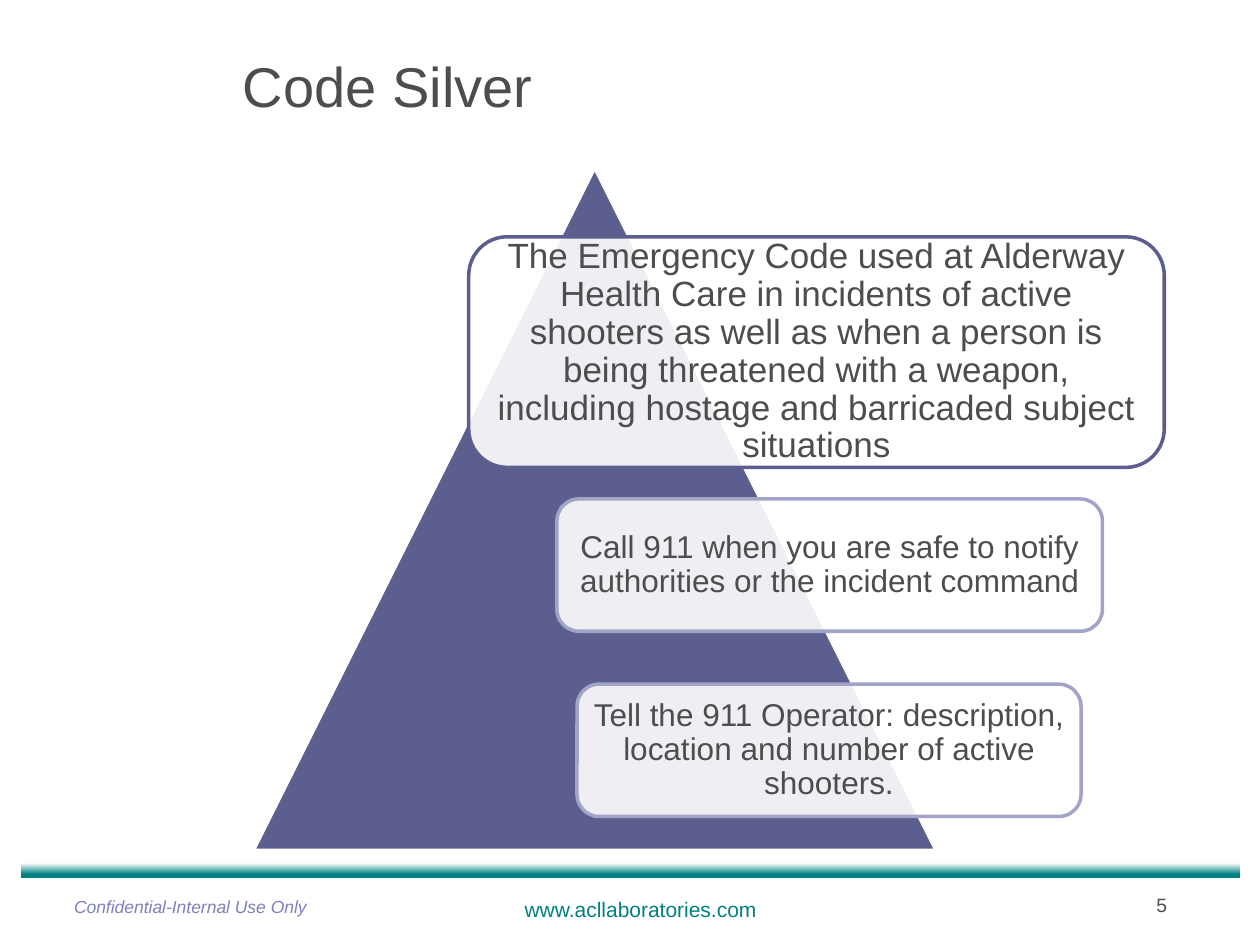
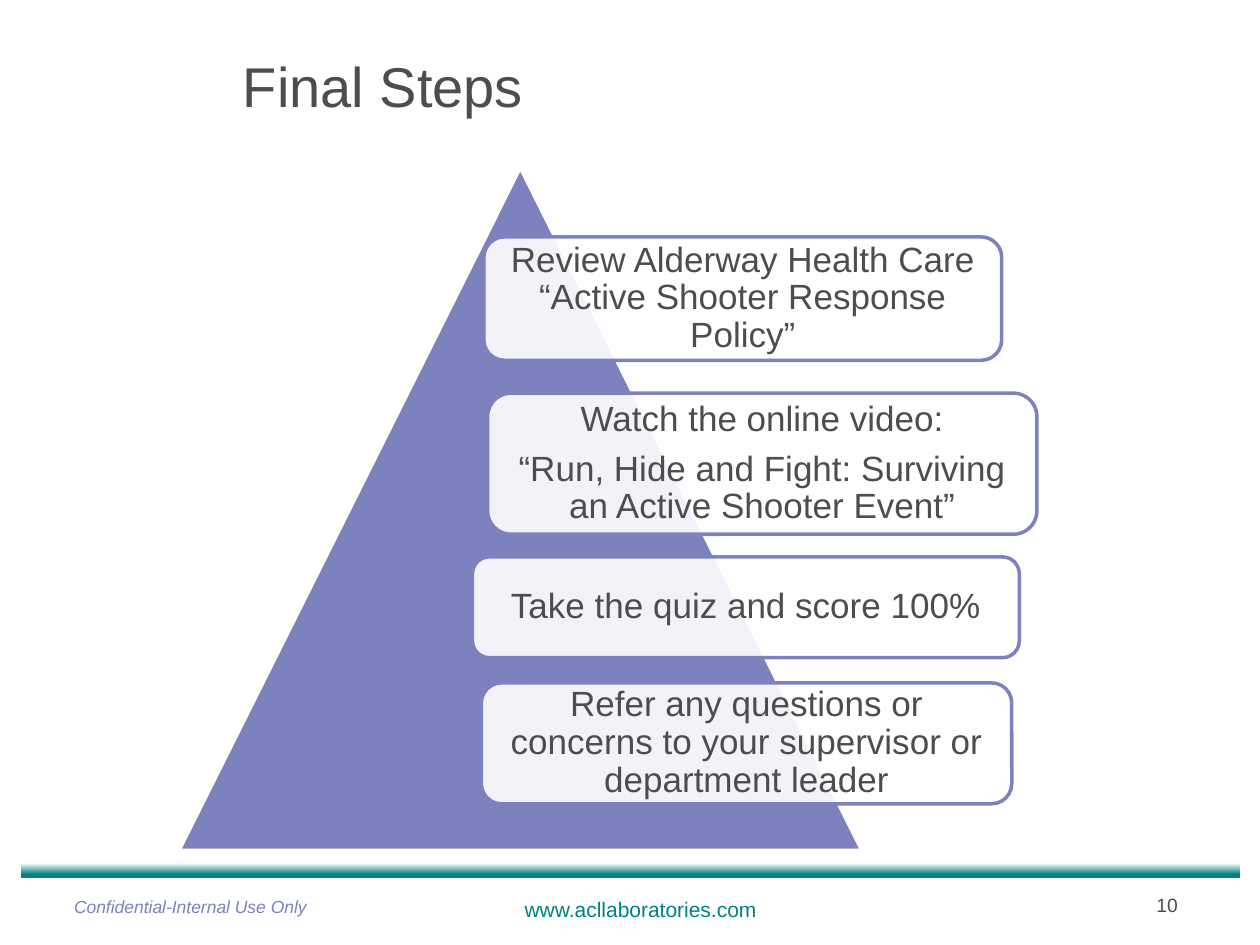
from dataclasses import dataclass

from lxml.etree import SubElement
from pptx import Presentation
from pptx.dml.color import RGBColor
from pptx.enum.shapes import MSO_SHAPE
from pptx.enum.text import MSO_ANCHOR, PP_ALIGN
from pptx.oxml.ns import qn
from pptx.shapes.autoshape import Shape
from pptx.slide import Slide
from pptx.util import Emu, Pt

PX = 9144  # one px is a hundredth of an inch
FONT = "Arial"
WHITE = RGBColor(0xFF, 0xFF, 0xFF)
TEAL = RGBColor(0x00, 0x80, 0x80)
INK = RGBColor(0x4D, 0x4D, 0x4D)
VIOLET = RGBColor(0x7D, 0x81, 0xBE)
DARK_VIOLET = RGBColor(0x5C, 0x5F, 0x8D)
PALE_VIOLET = RGBColor(0xA2, 0xA4, 0xC7)

PYRAMID_TOP = 133
PYRAMID_SIZE = 542
CARD_OPACITY = 90
OUTLINE = Pt(2)


@dataclass(frozen=True)
class Box:
    left: int
    top: int
    width: int
    height: int

    def emu(self) -> tuple[Emu, ...]:
        return tuple(Emu(n * PX) for n in (self.left, self.top, self.width, self.height))


@dataclass(frozen=True)
class Label:
    box: Box
    size: int
    color: RGBColor
    align: PP_ALIGN = PP_ALIGN.LEFT
    italic: bool = False
    anchor: MSO_ANCHOR = MSO_ANCHOR.TOP
    line_spacing: float = 1.0


@dataclass(frozen=True)
class Card:
    box: Box
    paragraphs: tuple[str, ...]
    outline: RGBColor = VIOLET
    size: int = 20
    inset: int = 8


@dataclass(frozen=True)
class PyramidSlide:
    title: str
    number: int
    pyramid_left: int
    pyramid_color: RGBColor
    cards: tuple[Card, ...]


BAND = Box(17, 685, 967, 12)
TITLE = Label(Box(183, 25, 783, 92), 32, INK, anchor=MSO_ANCHOR.MIDDLE, line_spacing=0.9)
WEB_ADDRESS = Label(Box(358, 707, 301, 30), 12, TEAL, PP_ALIGN.CENTER)
PAGE_NUMBER = Label(Box(908, 704, 51, 29), 11, INK)
CONFIDENTIALITY = Label(Box(0, 706, 302, 43), 10, VIOLET, PP_ALIGN.CENTER, italic=True)

SLIDES = (
    PyramidSlide("Code Silver", 5, 201, DARK_VIOLET, (
        Card(Box(372, 188, 552, 183),
             ("The Emergency Code used at Alderway Health Care in incidents of active "
              "shooters as well as when a person is being threatened with a weapon, "
              "including hostage and barricaded subject situations",),
             DARK_VIOLET),
        Card(Box(442, 396, 433, 105),
             ("Call 911 when you are safe to notify authorities or the incident command",),
             PALE_VIOLET, 18, 7),
        Card(Box(458, 543, 400, 105),
             ("Tell the 911 Operator: description, location and number of active shooters.",),
             PALE_VIOLET, 18, 7),
    )),
    PyramidSlide("Final Steps", 10, 142, VIOLET, (
        Card(Box(384, 188, 411, 98),
             ("Review Alderway Health Care “Active Shooter Response Policy”",)),
        Card(Box(387, 312, 436, 112),
             ("Watch the online video:",
              "“Run, Hide and Fight: Surviving an Active Shooter Event”")),
        Card(Box(375, 442, 434, 80), ("Take the quiz and score 100%",)),
        Card(Box(382, 542, 421, 96),
             ("Refer any questions or concerns to your supervisor or department leader",)),
    )),
)


def add_label(slide: Slide, label: Label, text: str) -> None:
    frame = slide.shapes.add_textbox(*label.box.emu()).text_frame
    frame.word_wrap = True
    frame.vertical_anchor = label.anchor
    paragraph = frame.paragraphs[0]
    paragraph.text = text
    paragraph.alignment = label.align
    paragraph.line_spacing = label.line_spacing
    font = paragraph.font
    font.name, font.size, font.italic = FONT, Pt(label.size), label.italic
    font.color.rgb = label.color


def add_filled_shape(slide: Slide, kind: MSO_SHAPE, box: Box,
                     fill: RGBColor, outline: RGBColor) -> Shape:
    shape = slide.shapes.add_shape(kind, *box.emu())
    shape.shadow.inherit = False
    shape.fill.solid()
    shape.fill.fore_color.rgb = fill
    shape.line.color.rgb = outline
    shape.line.width = OUTLINE
    return shape


def add_band(slide: Slide) -> None:
    """Draw the footer band, fading downward from white to teal."""
    band = slide.shapes.add_shape(MSO_SHAPE.RECTANGLE, *BAND.emu())
    band.shadow.inherit = False
    band.line.fill.background()
    band.fill.gradient()
    band.fill.gradient_angle = 270
    for stop, position, color in zip(band.fill.gradient_stops, (0, 0.74), (WHITE, TEAL)):
        stop.position = position
        stop.color.rgb = color


def add_card(slide: Slide, card: Card) -> None:
    shape = add_filled_shape(slide, MSO_SHAPE.ROUNDED_RECTANGLE, card.box, WHITE, card.outline)
    color = shape.element.spPr.find(qn("a:solidFill")).find(qn("a:srgbClr"))
    SubElement(color, qn("a:alpha"), val=str(CARD_OPACITY * 1000))

    frame = shape.text_frame
    frame.word_wrap = True
    frame.vertical_anchor = MSO_ANCHOR.MIDDLE
    inset = Emu(card.inset * PX)
    frame.margin_left = frame.margin_right = frame.margin_top = frame.margin_bottom = inset
    for index, text in enumerate(card.paragraphs):
        paragraph = frame.add_paragraph() if index else frame.paragraphs[0]
        paragraph.text = text
        paragraph.alignment = PP_ALIGN.CENTER
        paragraph.line_spacing = 0.9
        paragraph.space_after = Pt(card.size * 0.35)
        paragraph.font.name = FONT
        paragraph.font.size = Pt(card.size)
        paragraph.font.color.rgb = INK


def add_footer(slide: Slide, number: int) -> None:
    add_band(slide)
    add_label(slide, WEB_ADDRESS, "www.acllaboratories.com")
    add_label(slide, PAGE_NUMBER, str(number))
    add_label(slide, CONFIDENTIALITY, "Confidential-Internal Use Only")


def main() -> None:
    deck = Presentation()
    deck.slide_width, deck.slide_height = Emu(1000 * PX), Emu(750 * PX)
    blank = deck.slide_layouts[6]
    for content in SLIDES:
        slide = deck.slides.add_slide(blank)
        add_footer(slide, content.number)
        add_label(slide, TITLE, content.title)
        pyramid = Box(content.pyramid_left, PYRAMID_TOP, PYRAMID_SIZE, PYRAMID_SIZE)
        add_filled_shape(slide, MSO_SHAPE.ISOSCELES_TRIANGLE, pyramid,
                         content.pyramid_color, WHITE)
        for card in content.cards:
            add_card(slide, card)
    deck.save("out.pptx")


if __name__ == "__main__":
    main()
